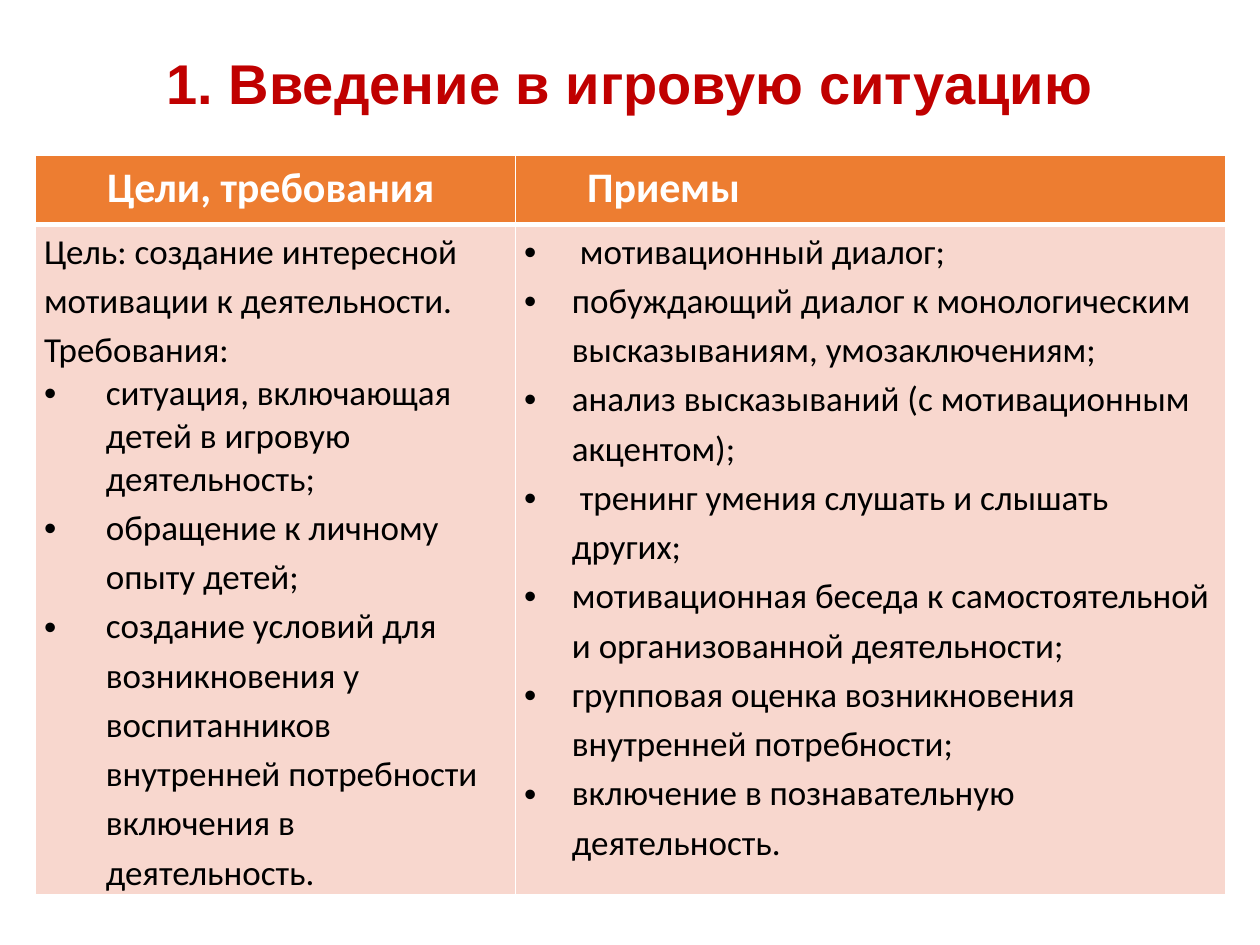
from lxml.etree import SubElement
from pptx import Presentation
from pptx.dml.color import RGBColor
from pptx.enum.text import MSO_ANCHOR, PP_ALIGN
from pptx.oxml.ns import qn
from pptx.util import Inches, Pt

THEME = {
    "title": {"name": "Arial", "size": Pt(32), "bold": True, "color": "C00000"},
    "header": {"name": "Calibri", "size": Pt(24), "bold": True, "color": "FFFFFF"},
    "body": {"name": "Calibri", "size": Pt(20), "bold": False, "color": "000000"},
    "header_fill": "ED7D31",
    "body_fill": "F8D7CE",
    "border": "FFFFFF",
}


def write_paragraph(paragraph, text, style, spacing, margin=0, bullet=False):
    properties = paragraph._p.get_or_add_pPr()
    properties.set("marL", str(Inches(margin)))
    properties.set("indent", str(Inches(-margin if bullet else 0)))
    if bullet:
        SubElement(properties, qn("a:buFont"), typeface="Arial")
        SubElement(properties, qn("a:buChar"), char="•")
    paragraph.line_spacing = spacing
    run = paragraph.add_run()
    run.text = text
    for name, value in THEME[style].items():
        if name == "color":
            run.font.color.rgb = RGBColor.from_string(value)
        else:
            setattr(run.font, name, value)


def format_cell(cell, fill, widths):
    for name, value in {"margin_left": 0.07, "margin_right": 0.07,
                        "margin_top": 0, "margin_bottom": 0}.items():
        setattr(cell, name, Inches(value))
    properties = cell._tc.get_or_add_tcPr()
    for side, width in widths.items():
        line = SubElement(properties, qn(f"a:ln{side}"), w=str(Pt(width)))
        color = SubElement(line, qn("a:solidFill"))
        SubElement(color, qn("a:srgbClr"), val=THEME["border"])
    cell.fill.solid()
    cell.fill.fore_color.rgb = RGBColor.from_string(THEME[fill])


presentation = Presentation()
presentation.slide_width, presentation.slide_height = Inches(10), Inches(7.5)
slide = presentation.slides.add_slide(presentation.slide_layouts[6])

# Title
title = slide.shapes.add_textbox(Inches(0.5), Inches(0.3), Inches(9), Inches(0.77))
title.text_frame.word_wrap = True
title.text_frame.vertical_anchor = MSO_ANCHOR.MIDDLE
heading = title.text_frame.paragraphs[0]
heading.alignment = PP_ALIGN.CENTER
write_paragraph(heading, "1. Введение в игровую ситуацию", "title", 0.9)

# Table content: header, then (text, line spacing, bullet) for each paragraph
columns = [
    {"header": "Цели, требования", "width": 3.81, "indent": 0.49, "items": [
        ("Цель: создание интересной мотивации к деятельности.", 1.15, False),
        ("Требования:", 1.15, False),
        ("ситуация, включающая детей в игровую деятельность;", 1, True),
        ("обращение к личному опыту детей;", 1.15, True),
        ("создание условий для возникновения у воспитанников "
         "внутренней потребности включения в деятельность.", 1.15, True),
    ]},
    {"header": "Приемы", "width": 5.64, "indent": 0.38, "items": [
        (text, 1.15, True) for text in (
            " мотивационный диалог;",
            "побуждающий диалог к монологическим высказываниям, умозаключениям;",
            "анализ высказываний (с мотивационным акцентом);",
            " тренинг умения слушать и слышать других;",
            "мотивационная беседа к самостоятельной и организованной деятельности;",
            "групповая оценка возникновения внутренней потребности;",
            "включение в познавательную деятельность.",
        )
    ]},
]

# Table grid
table = slide.shapes.add_table(2, 2, Inches(0.28), Inches(1.23),
                               Inches(9.45), Inches(5.87)).table
for row, height in zip(table.rows, (0.55, 5.32)):
    row.height = Inches(height)

# Table cells
for index, column in enumerate(columns):
    table.columns[index].width = Inches(column["width"])
    header, body = table.cell(0, index), table.cell(1, index)
    format_cell(header, "header_fill", {"L": 1, "R": 1, "T": 1, "B": 3})
    format_cell(body, "body_fill", {"L": 1, "R": 1, "T": 3, "B": 1})
    write_paragraph(header.text_frame.paragraphs[0], column["header"],
                    "header", 1.15, 0.5)
    for number, (text, spacing, bullet) in enumerate(column["items"]):
        frame = body.text_frame
        paragraph = frame.add_paragraph() if number else frame.paragraphs[0]
        write_paragraph(paragraph, text, "body", spacing,
                        column["indent"] if bullet else 0, bullet)

presentation.save("out.pptx")
